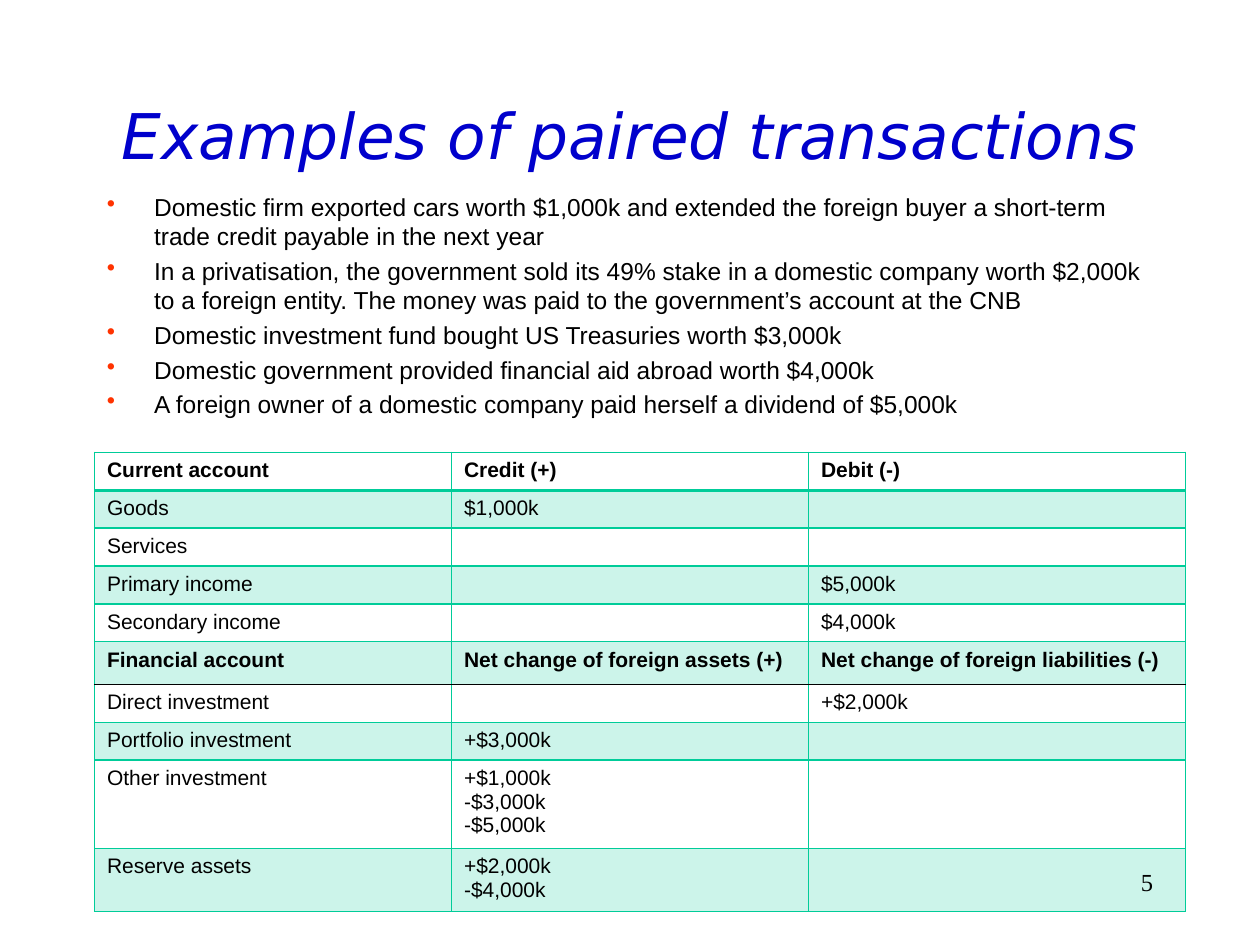
import pptx
import pptx.util
import pptx.dml.color
import pptx.enum.text
import pptx.oxml.ns
from lxml import etree

Pt = pptx.util.Pt
RGBColor = pptx.dml.color.RGBColor
PP_ALIGN = pptx.enum.text.PP_ALIGN
MSO_ANCHOR = pptx.enum.text.MSO_ANCHOR
qn = pptx.oxml.ns.qn

BLUE = RGBColor(0x00, 0x00, 0xCC)
GREEN = RGBColor(0x00, 0xCC, 0x99)
RED = RGBColor(0xFF, 0x33, 0x00)
BLACK = RGBColor(0x00, 0x00, 0x00)

TRANSACTIONS = [
    "Domestic firm exported cars worth $1,000k and extended the foreign buyer "
    "a short-term trade credit payable in the next year",
    "In a privatisation, the government sold its 49% stake in a domestic company "
    "worth $2,000k to a foreign entity. The money was paid to the government’s "
    "account at the CNB",
    "Domestic investment fund bought US Treasuries worth $3,000k",
    "Domestic government provided financial aid abroad worth $4,000k",
    "A foreign owner of a domestic company paid herself a dividend of $5,000k",
]

ACCOUNTS = [
    ("Current account", "Credit (+)", "Debit (-)"),
    ("Goods", "$1,000k", ""),
    ("Services", "", ""),
    ("Primary income", "", "$5,000k"),
    ("Secondary income", "", "$4,000k"),
    ("Financial account", "Net change of foreign assets (+)",
     "Net change of foreign liabilities (-)"),
    ("Direct investment", "", "+$2,000k"),
    ("Portfolio investment", "+$3,000k", ""),
    ("Other investment", "+$1,000k\n-$3,000k\n-$5,000k", ""),
    ("Reserve assets", "+$2,000k\n-$4,000k", ""),
]
CURRENT_HEADER, FINANCIAL_HEADER = 0, 5
COLUMN_WIDTHS = (204, 204, 215.5)
ROW_HEIGHT = 21.15
TALL_ROWS = {FINANCIAL_HEADER: 24.5, 8: 47.8, 9: 34}


def style(paragraph, size, name, color, bold=False, italic=False):
    font = paragraph.font
    font.size, font.name = Pt(size), name
    font.bold, font.italic = bold, italic
    font.color.rgb = color


def add_text(slide, left, top, width, height, lines, anchor=MSO_ANCHOR.TOP):
    box = slide.shapes.add_textbox(Pt(left), Pt(top), Pt(width), Pt(height))
    frame = box.text_frame
    frame.word_wrap = True
    frame.vertical_anchor = anchor
    frame.text = "\n".join(lines)
    return frame.paragraphs


def add_bullet(paragraph, indent):
    properties = paragraph._p.get_or_add_pPr()
    properties.set("marL", str(Pt(indent)))
    properties.set("indent", str(-Pt(indent)))
    color = etree.SubElement(properties, qn("a:buClr"))
    etree.SubElement(color, qn("a:srgbClr"), val=str(RED))
    etree.SubElement(properties, qn("a:buChar"), char="•")


def set_border(cell, side, color, width):
    line = etree.SubElement(cell._tc.get_or_add_tcPr(), qn("a:ln" + side),
                            w=str(Pt(width)))
    fill = etree.SubElement(line, qn("a:solidFill"))
    etree.SubElement(fill, qn("a:srgbClr"), val=str(color))


def set_tint(cell, color, percent):
    cell.fill.solid()
    cell.fill.fore_color.rgb = color
    srgb = cell._tc.tcPr.find(qn("a:solidFill")).find(qn("a:srgbClr"))
    etree.SubElement(srgb, qn("a:alpha"), val=str(percent * 1000))


def fill_cell(cell, text, row):
    cell.text = text
    for paragraph in cell.text_frame.paragraphs:
        style(paragraph, 12, "Arial", BLACK,
              bold=row in (CURRENT_HEADER, FINANCIAL_HEADER))
        if not text:  # keeps an empty cell as low as its row
            etree.SubElement(paragraph._p, qn("a:endParaRPr"), sz="1200")

    # Borders: thick under the first header, black under the second
    top = BLACK if row == FINANCIAL_HEADER + 1 else GREEN
    bottom = BLACK if row == FINANCIAL_HEADER else GREEN
    set_border(cell, "L", GREEN, 1)
    set_border(cell, "R", GREEN, 1)
    set_border(cell, "T", top, 2 if row == CURRENT_HEADER + 1 else 1)
    set_border(cell, "B", bottom, 2 if row == CURRENT_HEADER else 1)

    # Every second row is tinted
    if row % 2:
        set_tint(cell, GREEN, 20)
    else:
        cell.fill.background()


def add_accounts(slide, left, top):
    heights = [TALL_ROWS.get(row, ROW_HEIGHT) for row in range(len(ACCOUNTS))]
    table = slide.shapes.add_table(
        len(ACCOUNTS), len(COLUMN_WIDTHS), Pt(left), Pt(top),
        Pt(sum(COLUMN_WIDTHS)), Pt(sum(heights))).table
    table.first_row = table.horz_banding = False
    for column, width in zip(table.columns, COLUMN_WIDTHS):
        column.width = Pt(width)
    for row, (entries, height) in enumerate(zip(ACCOUNTS, heights)):
        table.rows[row].height = Pt(height)
        for column, text in enumerate(entries):
            fill_cell(table.cell(row, column), text, row)


def main():
    deck = pptx.Presentation()
    deck.slide_width, deck.slide_height = Pt(720), Pt(540)
    slide = deck.slides.add_slide(deck.slide_layouts[6])

    # Title
    title = add_text(slide, 54, 32, 612, 90,
                     ["Examples of paired transactions"], MSO_ANCHOR.MIDDLE)[0]
    title.alignment = PP_ALIGN.CENTER
    style(title, 36, "DejaVu Sans", BLUE, italic=True)

    # Balance of payments table
    add_accounts(slide, 54, 258.5)

    # Transactions
    transactions = add_text(slide, 54, 106, 612, 181, TRANSACTIONS)
    for index, transaction in enumerate(transactions):
        add_bullet(transaction, 27)
        transaction.space_before = Pt(3 if index else 0)
        style(transaction, 14, "Arial", BLACK)

    # Page number
    page_number = add_text(slide, 516, 492, 150, 36, ["5"])[0]
    page_number.alignment = PP_ALIGN.RIGHT
    style(page_number, 14, "Times New Roman", BLACK)

    deck.save("out.pptx")


if __name__ == "__main__":
    main()
